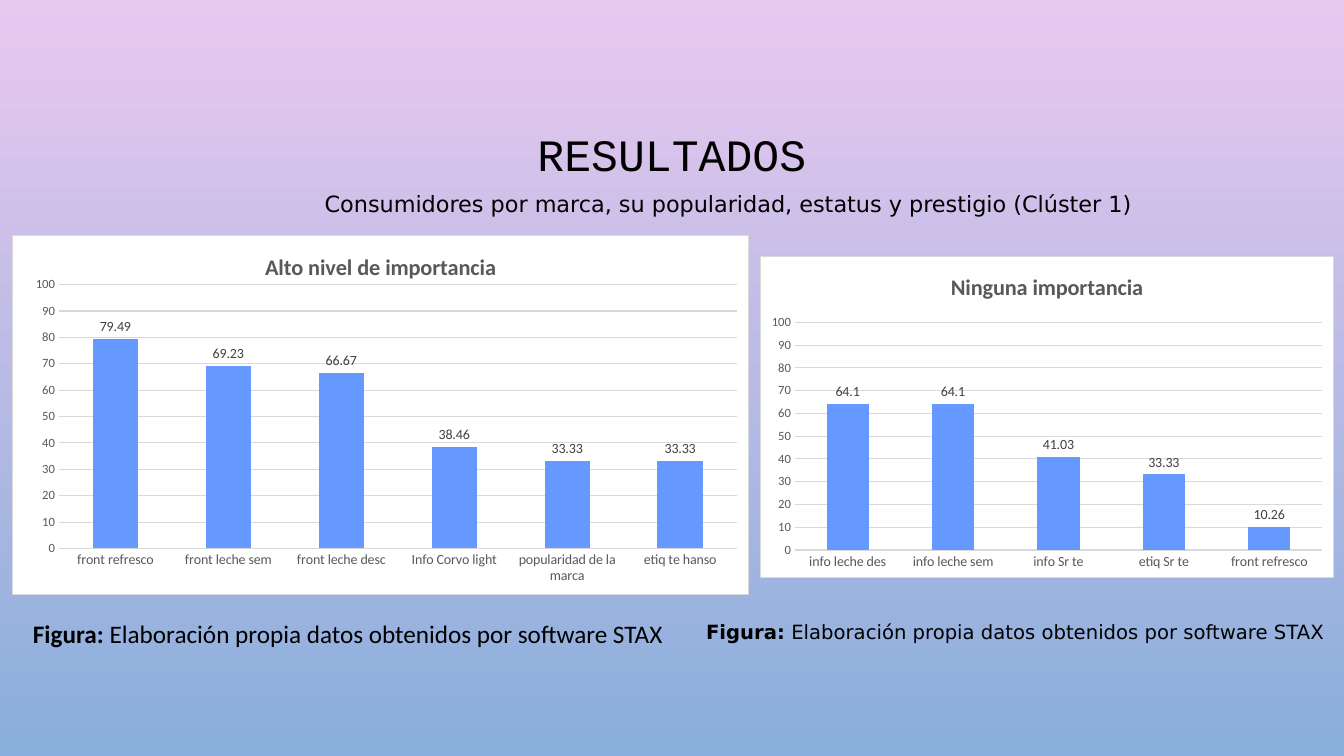
import pptx
import pptx.chart.data
import pptx.dml.color
import pptx.enum.chart
import pptx.enum.text
import pptx.oxml
import pptx.oxml.ns
import pptx.util

PX = 914400 / 100.8  # EMU per px
COLORS = {
    "pink": "E9C8EF", "sky": "89AEDB", "bar": "6699FF", "white": "FFFFFF",
    "black": "000000", "grid": "D9D9D9", "axis": "595959", "label": "404040",
}
CENTER = pptx.enum.text.PP_ALIGN.CENTER
LEFT = pptx.enum.text.PP_ALIGN.LEFT


def px(n):
    return round(n * PX)


def rgb(name):
    return pptx.dml.color.RGBColor.from_string(COLORS[name])


class Deck:
    def __init__(self, width, height):
        self.prs = pptx.Presentation()
        self.prs.slide_width, self.prs.slide_height = px(width), px(height)
        self.s = self.prs.slides.add_slide(self.prs.slide_layouts[5])

    def background(self, top, bottom):
        fill = self.s.background.fill
        fill.gradient()
        fill.gradient_angle = 270
        for stop, color in zip(fill.gradient_stops, (top, bottom)):
            stop.color.rgb = rgb(color)

    def font(self, font, size, color, name="Calibri", bold=False):
        font.size, font.name, font.bold = pptx.util.Pt(size), name, bold
        font.color.rgb = rgb(color)

    def title(self, text, x, y, w, h):
        sp = self.s.shapes.title
        sp.left, sp.top, sp.width, sp.height = map(px, (x, y, w, h))
        tf = sp.text_frame
        tf.vertical_anchor = pptx.enum.text.MSO_ANCHOR.MIDDLE
        p = tf.paragraphs[0]
        p.alignment, p.line_spacing = CENTER, 0.9
        r = p.add_run()
        r.text = text
        self.font(r.font, 32, "black", "Courier New")

    def text(self, runs, x, y, w, h, size, name, align=CENTER, indent=0):
        tf = self.s.shapes.add_textbox(*map(px, (x, y, w, h))).text_frame
        tf.word_wrap = True
        tf.auto_size = pptx.enum.text.MSO_AUTO_SIZE.SHAPE_TO_FIT_TEXT
        p = tf.paragraphs[0]
        p.alignment = align
        if indent:
            p._p.get_or_add_pPr().set("indent", str(px(indent)))
        for text, bold in runs:
            r = p.add_run()
            r.text = text
            self.font(r.font, size, "black", name, bold)

    def chart(self, title, values, x, y, w, h, plot_area):
        data = pptx.chart.data.CategoryChartData()
        data.categories = list(values)
        data.add_series("Series 1", list(values.values()))
        kind = pptx.enum.chart.XL_CHART_TYPE.COLUMN_CLUSTERED
        chart = self.s.shapes.add_chart(kind, *map(px, (x, y, w, h)), data).chart
        self.font(chart.font, 10, "black")
        chart.has_legend = False

        # Chart title
        chart.has_title = True
        chart.chart_title.include_in_layout = False
        r = chart.chart_title.text_frame.paragraphs[0].add_run()
        r.text = title
        self.font(r.font, 16, "axis", bold=True)

        # Axes
        none = pptx.enum.chart.XL_TICK_MARK.NONE
        cat, val = chart.category_axis, chart.value_axis
        for axis, size in ((cat, 10), (val, 9)):
            axis.major_tick_mark = axis.minor_tick_mark = none
            self.font(axis.tick_labels.font, size, "axis")
        val.minimum_scale, val.maximum_scale, val.major_unit = 0, 100, 10
        val.format.line.fill.background()
        for line, width in ((cat.format.line, 1), (val.major_gridlines.format.line, 0.75)):
            line.color.rgb = rgb("grid")
            line.width = pptx.util.Pt(width)

        # Columns and value labels
        plot = chart.plots[0]
        plot.gap_width, plot.vary_by_categories = 150, False
        fill = plot.series[0].format.fill
        fill.solid()
        fill.fore_color.rgb = rgb("bar")
        plot.has_data_labels = True
        labels = plot.data_labels
        labels.show_value = True
        labels.position = pptx.enum.chart.XL_LABEL_POSITION.OUTSIDE_END
        self.font(labels.font, 10, "label")
        self.frame(chart, plot_area)

    def frame(self, chart, plot_area):
        """White panel with a thin border, and the inner plot rectangle."""
        ns = pptx.oxml.ns.nsdecls("c", "a")
        root = chart._chartSpace.find(pptx.oxml.ns.qn("c:chart"))
        root.addnext(pptx.oxml.parse_xml(
            f'<c:spPr {ns}><a:solidFill><a:srgbClr val="{COLORS["white"]}"/></a:solidFill>'
            f'<a:ln w="9525"><a:solidFill><a:srgbClr val="{COLORS["grid"]}"/></a:solidFill>'
            '</a:ln></c:spPr>'))
        area = root.find(pptx.oxml.ns.qn("c:plotArea"))
        for old in area.findall(pptx.oxml.ns.qn("c:layout")):
            area.remove(old)
        sizes = "".join(f'<c:{k} val="{v}"/>' for k, v in zip("xywh", plot_area))
        area.insert(0, pptx.oxml.parse_xml(
            f'<c:layout {ns}><c:manualLayout><c:layoutTarget val="inner"/>'
            f'<c:xMode val="edge"/><c:yMode val="edge"/>{sizes}</c:manualLayout></c:layout>'))


def main():
    d = Deck(1344, 756)
    d.background("pink", "sky")

    # Heading
    d.title("RESULTADOS", 101, 69, 1142, 176)
    d.text([("Consumidores por marca, su popularidad, estatus y prestigio (Clúster 1)", False)],
           240, 185, 928, 37, 16, "DejaVu Sans", indent=49)

    # Charts
    d.chart("Alto nivel de importancia", {
        "front refresco": 79.49, "front leche sem": 69.23, "front leche desc": 66.67,
        "Info Corvo light": 38.46, "popularidad de la marca": 33.33, "etiq te hanso": 33.33,
    }, 12, 235, 737, 360, (0.063, 0.137, 0.921, 0.735))
    d.chart("Ninguna importancia", {
        "info leche des": 64.1, "info leche sem": 64.1, "info Sr te": 41.03,
        "etiq Sr te": 33.33, "front refresco": 10.26,
    }, 760, 256, 574, 322, (0.06, 0.205, 0.92, 0.71))

    # Captions
    credit = " Elaboración propia datos obtenidos por software STAX"
    d.text([("Figura:", True), (credit, False)], 23, 613, 681, 40, 18, "Calibri", LEFT)
    d.text([("Figura:", True), (credit + " ", False)], 693, 615, 651, 34, 14, "DejaVu Sans")

    d.prs.save("out.pptx")


if __name__ == "__main__":
    main()
